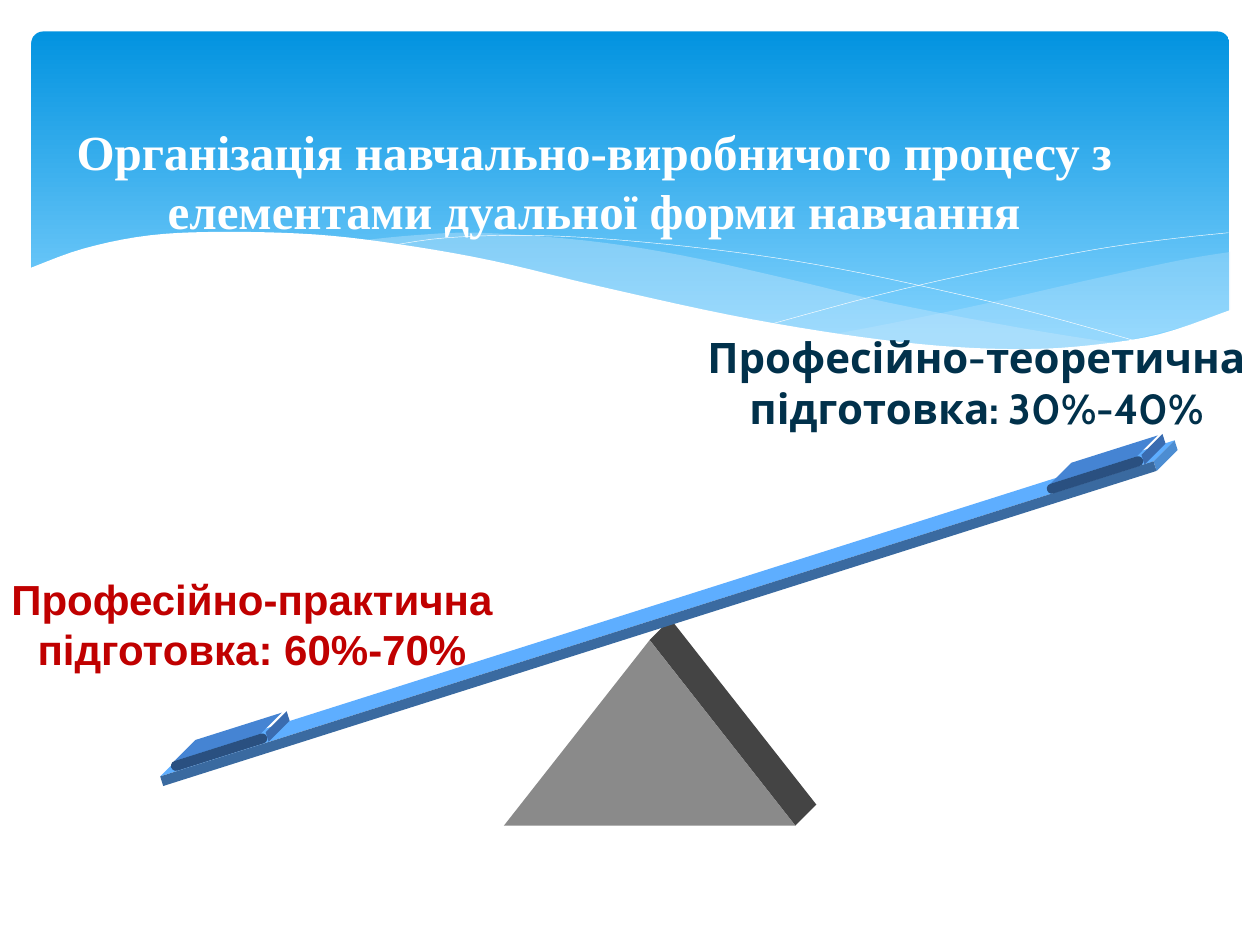
import math
from dataclasses import dataclass

import pptx
import pptx.dml.color
import pptx.enum.shapes
import pptx.enum.text
import pptx.oxml
import pptx.oxml.ns
import pptx.util

Pt = pptx.util.Pt
SHAPE = pptx.enum.shapes.MSO_SHAPE


@dataclass(frozen=True)
class Theme:
    white: str = "FFFFFF"
    banner_top: str = "0293E0"
    banner_bottom: str = "83D3FE"
    wave: str = "C6E7FC"
    pivot_front: str = "8A8A8A"
    pivot_side: str = "444444"
    beam: tuple = ("3A6AA0", "5EAEFF", "4C8DD2")
    weight: tuple = ("2A5080", "4584D3", "3A6CB0")
    practice: str = "C00000"
    theory: str = "01314B"
    title_size: int = 28
    label_size: int = 24


THEME = Theme()
TILT = 342.4
DEPTH = (12, -12)

RIGHT_WAVE = (
    [(703, 144), (673, 149), (620, 160.5), (561, 174), (508, 185), (476, 191)],
    [(476, 191), (527, 197), (578, 200), (628, 197), (668, 189), (703, 178)],
)
MIDDLE_WAVE = (
    [(643, 197), (581, 187), (508, 173), (453, 160), (390, 146),
     (335, 137.5), (274, 133), (236, 134.5), (206, 137.5)],
    [(206, 137.5), (261, 146), (323, 160), (407.5, 178.5), (468, 190),
     (520, 197), (573, 200), (611, 199.5), (643, 197)],
)
FALLING_LINE = [(222.5, 140.5), (254, 136), (299.5, 134.5), (352, 137), (419, 144),
                (479, 153.5), (547, 168), (598, 180.5), (653, 196)]
RISING_LINE = [(441.5, 185), (500.5, 169), (559, 155.5), (623.5, 143), (665, 137), (702, 133)]
BANNER_EDGE = [(703.5, 177), (662.5, 191), (621, 197.5), (582.5, 199.5), (535.5, 197.5),
               (481, 191), (417, 180), (342, 163.5), (281.5, 149), (227.5, 139.5),
               (180, 134), (127.5, 132.5), (85.5, 134.5), (48, 142), (16.5, 153.5)]


def rgb(color):
    return pptx.dml.color.RGBColor.from_string(color)


def smooth(knots, steps=5):
    pts = [knots[0], *knots, knots[-1]]
    out = []
    for a, b, c, d in zip(pts, pts[1:], pts[2:], pts[3:]):
        for i in range(steps):
            t = i / steps
            out.append(tuple(
                0.5 * (2 * q + (r - p) * t + (2 * p - 5 * q + 4 * r - u) * t ** 2
                       + (3 * q - p - 3 * r + u) * t ** 3)
                for p, q, r, u in zip(a, b, c, d)))
    return out + [knots[-1]]


def paint(sp, color, opacity=100):
    sp.shadow.inherit = False
    sp.line.fill.background()
    sp.fill.solid()
    sp.fill.fore_color.rgb = rgb(color)
    if opacity < 100:
        clr = sp.fill._xPr.find(".//" + pptx.oxml.ns.qn("a:srgbClr"))
        clr.append(pptx.oxml.parse_xml(
            f'<a:alpha {pptx.oxml.ns.nsdecls("a")} val="{opacity * 1000}"/>'))


def add_outline(s, points, closed):
    pts = [(Pt(x), Pt(y)) for x, y in points]
    builder = s.shapes.build_freeform(*pts[0])
    builder.add_line_segments(pts[1:], close=closed)
    return builder.convert_to_shape()


def add_area(s, points, color, opacity=100):
    paint(add_outline(s, points, True), color, opacity)


def add_curve(s, knots):
    sp = add_outline(s, smooth(knots), False)
    sp.shadow.inherit = False
    sp.fill.background()
    sp.line.color.rgb = rgb(THEME.white)
    sp.line.width = Pt(0.25)


def add_preset(s, kind, x, y, w, h, color):
    sp = s.shapes.add_shape(kind, Pt(x), Pt(y), Pt(w), Pt(h))
    paint(sp, color)
    return sp


def add_side(s, start, end, color):
    dx, dy = DEPTH
    back = [(x + dx, y + dy) for x, y in (end, start)]
    add_area(s, [start, end, *back], color)


def add_bar(s, kind, cx, cy, w, h, colors):
    front, top, end = colors
    angle = math.radians(TILT)
    cos, sin = math.cos(angle), math.sin(angle)

    def corner(x, y):
        return cx + x * cos - y * sin, cy + x * sin + y * cos

    inset = h / 2 if kind == SHAPE.ROUNDED_RECTANGLE else 0
    left, right = inset - w / 2, w / 2 - inset
    add_side(s, corner(left, -h / 2), corner(right, -h / 2), top)
    add_side(s, corner(w / 2, -h / 2), corner(w / 2, h / 2), end)
    sp = add_preset(s, kind, cx - w / 2, cy - h / 2, w, h, front)
    sp.rotation = TILT
    if inset:
        sp.adjustments[0] = 0.5


def add_label(s, x, y, w, h, text, font, size, color):
    tf = s.shapes.add_textbox(Pt(x), Pt(y), Pt(w), Pt(h)).text_frame
    tf.word_wrap = True
    tf.auto_size = pptx.enum.text.MSO_AUTO_SIZE.SHAPE_TO_FIT_TEXT
    tf.text = text
    p = tf.paragraphs[0]
    p.alignment = pptx.enum.text.PP_ALIGN.CENTER
    r = p.runs[0]
    r.font.name = font
    r.font.size = Pt(size)
    r.font.bold = True
    r.font.color.rgb = rgb(color)


def add_banner(s):
    sp = add_preset(s, SHAPE.ROUNDED_RECTANGLE, 18, 18, 684.5, 194.5, THEME.banner_top)
    sp.adjustments[0] = 0.034
    sp.fill.gradient()
    sp.fill.gradient_angle = 270
    stops = zip(sp.fill.gradient_stops, (THEME.banner_top, THEME.banner_bottom), (0, 0.9))
    for stop, color, position in stops:
        stop.color.rgb = rgb(color)
        stop.position = position
    for (upper, lower), opacity in ((RIGHT_WAVE, 29), (MIDDLE_WAVE, 40)):
        add_area(s, smooth(upper) + smooth(lower), THEME.wave, opacity)
    add_curve(s, FALLING_LINE)
    add_curve(s, RISING_LINE)
    add_area(s, smooth(BANNER_EDGE) + [(16.5, 237), (703.5, 237)], THEME.white)


def add_seesaw(s):
    x, y, w, h = 288, 365.75, 166.5, 106
    add_side(s, (x + w / 2, y), (x + w, y + h), THEME.pivot_side)
    add_preset(s, SHAPE.ISOSCELES_TRIANGLE, x, y, w, h, THEME.pivot_front)
    add_bar(s, SHAPE.RECTANGLE, 376.25, 356.4, 595.5, 5.75, THEME.beam)
    for cx, cy in ((125.25, 429.8), (625.75, 271.4)):
        add_bar(s, SHAPE.ROUNDED_RECTANGLE, cx, cy, 57.5, 5.75, THEME.weight)


def main():
    prs = pptx.Presentation()
    prs.slide_width, prs.slide_height = Pt(720), Pt(540)
    s = prs.slides.add_slide(prs.slide_layouts[6])
    add_banner(s)
    add_seesaw(s)
    add_label(s, 31, 66, 617, 75,
              "Організація навчально-виробничого процесу з елементами дуальної форми навчання",
              "Times New Roman", THEME.title_size, THEME.white)
    add_label(s, -36, 324, 360, 65.5, "Професійно-практична підготовка: 60%-70%",
              "Arial", THEME.label_size, THEME.practice)
    add_label(s, 396, 186, 324, 65.5, "Професійно-теоретична підготовка: 30%-40%",
              "Cabin", THEME.label_size, THEME.theory)
    prs.save("out.pptx")


if __name__ == "__main__":
    main()
